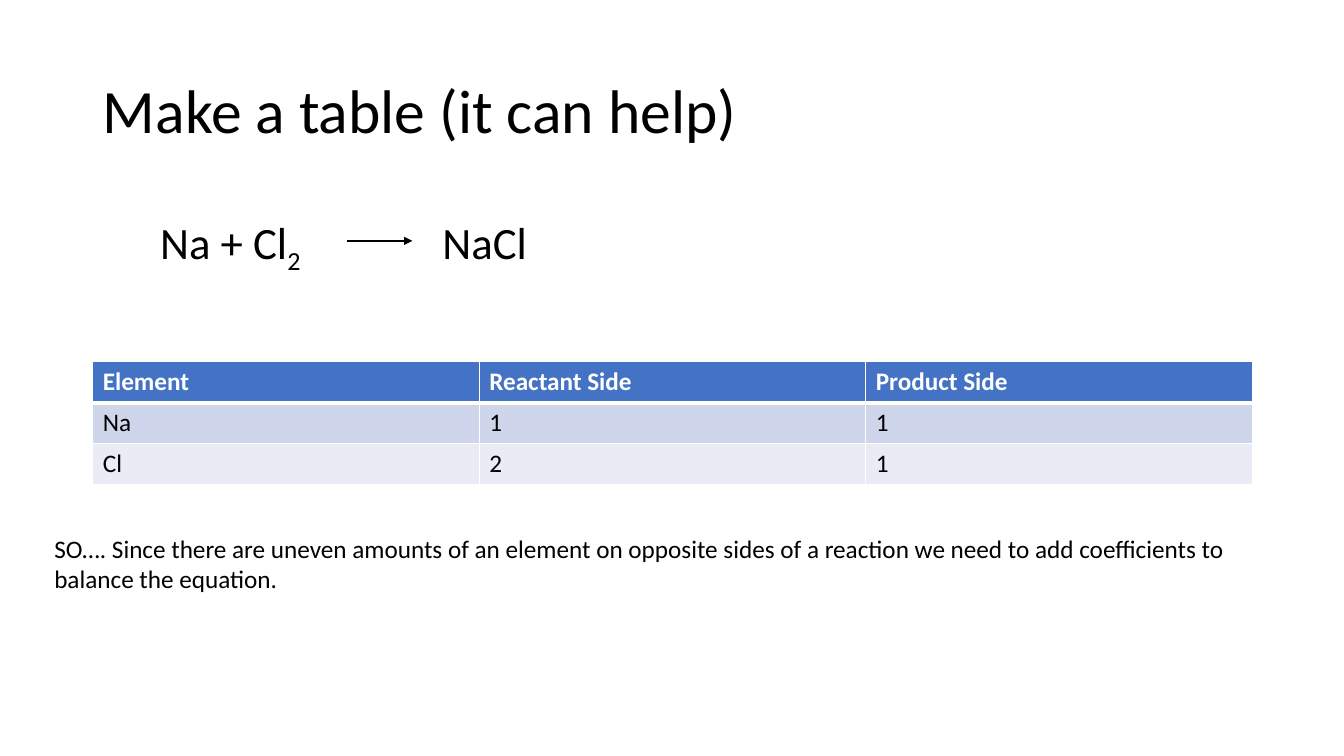
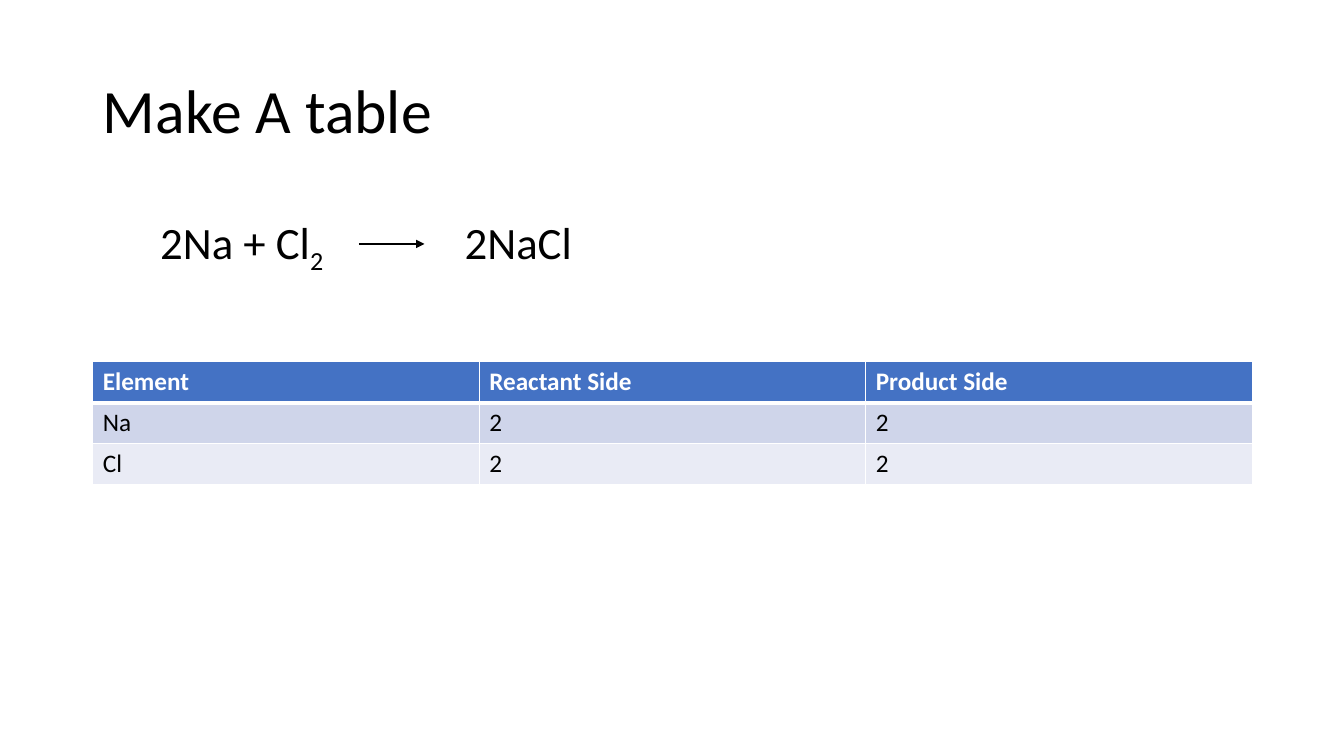
"""Build two slides that balance a chemical equation with a table."""
from lxml.etree import SubElement
from pptx import Presentation
from pptx.dml.color import RGBColor
from pptx.enum.shapes import MSO_CONNECTOR
from pptx.enum.text import MSO_ANCHOR, PP_ALIGN
from pptx.oxml.ns import qn
from pptx.util import Pt

PX = 9144
FONT = "Calibri"
BLACK = RGBColor(0x00, 0x00, 0x00)
WHITE = RGBColor(0xFF, 0xFF, 0xFF)
BLUE = RGBColor(0x44, 0x72, 0xC4)
BAND_DARK = RGBColor(0xCF, 0xD5, 0xEA)
BAND_LIGHT = RGBColor(0xE9, 0xEB, 0xF5)
ROW_FILLS = [BLUE, BAND_DARK, BAND_LIGHT]
HEADER = ["Element", "Reactant Side", "Product Side"]

SLIDES = [
    {
        "title": "Make a table (it can help)",
        "reactants": "Na + Cl",
        "product": "NaCl",
        "product_tab": 280,
        "arrow": (344, 239),
        "counts": [["Na", "1", "1"], ["Cl", "2", "1"]],
        "note": "SO…. Since there are uneven amounts of an element on opposite sides "
                "of a reaction we need to add coefficients to balance the equation.",
    },
    {
        "title": "Make A table",
        "reactants": "2Na + Cl",
        "product": "2NaCl",
        "product_tab": 302,
        "arrow": (356, 242),
        "counts": [["Na", "2", "2"], ["Cl", "2", "2"]],
        "note": None,
    },
]


def box(*lengths):
    return [n * PX for n in lengths]


def style(p, size, color=BLACK, bold=False):
    for r in p.runs:
        r.font.name = FONT
        r.font.size = Pt(size)
        r.font.bold = bold
        r.font.color.rgb = color


prs = Presentation()
prs.slide_width, prs.slide_height = box(1333, 750)

for content in SLIDES:
    s = prs.slides.add_slide(prs.slide_layouts[5])

    title = s.shapes.title
    title.left, title.top, title.width, title.height = box(92, 40, 1150, 145)
    tf = title.text_frame
    tf.text = content["title"]
    tf.vertical_anchor = MSO_ANCHOR.MIDDLE
    p = tf.paragraphs[0]
    p.alignment = PP_ALIGN.LEFT
    p.line_spacing = 0.9
    style(p, 44)

    rows = [HEADER] + content["counts"]
    table = s.shapes.add_table(len(rows), len(HEADER), *box(92, 359, 1150, 122)).table
    for i, (row, fill) in enumerate(zip(rows, ROW_FILLS)):
        is_header = i == 0
        for j, text in enumerate(row):
            cell = table.cell(i, j)
            tcPr = cell._tc.get_or_add_tcPr()
            for side in "LRTB":
                thick = (side == "B" and i == 0) or (side == "T" and i == 1)
                ln = SubElement(tcPr, qn(f"a:ln{side}"), w=str(Pt(3 if thick else 1)))
                SubElement(SubElement(ln, qn("a:solidFill")), qn("a:srgbClr"), val=str(WHITE))
            cell.fill.solid()
            cell.fill.fore_color.rgb = fill
            cell.text_frame.text = text
            style(cell.text_frame.paragraphs[0], 18, WHITE if is_header else BLACK, is_header)

    tf = s.shapes.add_textbox(*box(149, 208, 1150, 64)).text_frame
    tf.word_wrap = True
    p = tf.paragraphs[0]
    for text in (content["reactants"], "2", "\t" + content["product"]):
        p.add_run().text = text
    style(p, 32)
    p.runs[1].font._element.set("baseline", "-25000")
    tabs = SubElement(p._p.get_or_add_pPr(), qn("a:tabLst"))
    SubElement(tabs, qn("a:tab"), pos=str(content["product_tab"] * PX), algn="l")

    x, y = content["arrow"]
    arrow = s.shapes.add_connector(MSO_CONNECTOR.STRAIGHT, *box(x, y, x + 65, y))
    arrow.line.color.rgb = BLACK
    arrow.line.width = Pt(1.5)
    SubElement(arrow.line._get_or_add_ln(), qn("a:tailEnd"), type="triangle")
    SubElement(arrow._element.spPr, qn("a:effectLst"))

    if content["note"]:
        tf = s.shapes.add_textbox(*box(44, 524, 1206, 71)).text_frame
        tf.word_wrap = True
        tf.text = content["note"]
        style(tf.paragraphs[0], 18)

prs.save("out.pptx")
